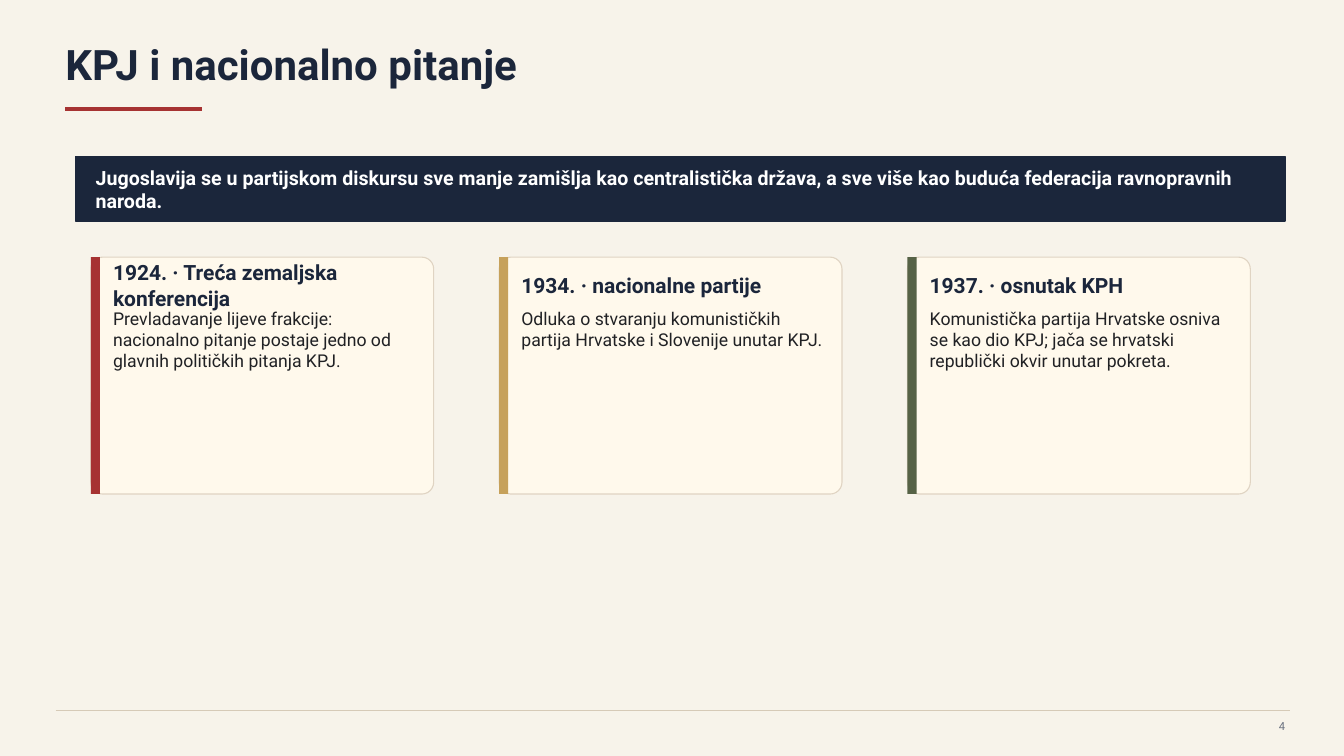
"""Builds the slide on the party and the national question, with three dated cards."""
import lxml.etree
import pptx
import pptx.dml.color
import pptx.enum.shapes
import pptx.enum.text
import pptx.oxml.ns
import pptx.util

Cm = pptx.util.Cm
Pt = pptx.util.Pt
RGBColor = pptx.dml.color.RGBColor
Shape = pptx.enum.shapes.MSO_SHAPE
Anchor = pptx.enum.text.MSO_ANCHOR
Align = pptx.enum.text.PP_ALIGN

PAPER = RGBColor(0xF7, 0xF3, 0xEA)
NAVY = RGBColor(0x1B, 0x26, 0x3B)
RED = RGBColor(0xA6, 0x32, 0x32)
GOLD = RGBColor(0xC6, 0xA1, 0x5B)
GREEN = RGBColor(0x56, 0x62, 0x46)
CREAM = RGBColor(0xFF, 0xF9, 0xEC)
CARD_EDGE = RGBColor(0xE0, 0xD4, 0xC3)
RULE = RGBColor(0xD6, 0xCA, 0xB7)
INK = RGBColor(0x20, 0x21, 0x24)
GRAY = RGBColor(0x6B, 0x72, 0x80)
WHITE = RGBColor(0xFF, 0xFF, 0xFF)

CARDS = [
    (RED, "1924. · Treća zemaljska konferencija",
     "Prevladavanje lijeve frakcije: nacionalno pitanje postaje jedno od "
     "glavnih političkih pitanja KPJ."),
    (GOLD, "1934. · nacionalne partije",
     "Odluka o stvaranju komunističkih partija Hrvatske i Slovenije unutar KPJ."),
    (GREEN, "1937. · osnutak KPH",
     "Komunistička partija Hrvatske osniva se kao dio KPJ; jača se hrvatski "
     "republički okvir unutar pokreta."),
]


class Deck:
    font = "Roboto"

    def __init__(self, prs):
        self.s = prs.slides.add_slide(prs.slide_layouts[6])
        self.s.background.fill.solid()
        self.s.background.fill.fore_color.rgb = PAPER

    def text(self, x, y, w, h, words, size, color, bold=False,
             anchor=Anchor.MIDDLE, align=Align.LEFT):
        tf = self.s.shapes.add_textbox(Cm(x), Cm(y), Cm(w), Cm(h)).text_frame
        tf.word_wrap = True
        tf.vertical_anchor = anchor
        tf.margin_left = tf.margin_right = tf.margin_top = tf.margin_bottom = 0
        p = tf.paragraphs[0]
        p.alignment = align
        r = p.add_run()
        r.text = words
        r.font.name = self.font
        r.font.size = Pt(size)
        r.font.bold = bold
        r.font.color.rgb = color

    def shape(self, kind, x, y, w, h, fill, edge=None, width=1):
        sp = self.s.shapes.add_shape(kind, Cm(x), Cm(y), Cm(w), Cm(h))
        sp.shadow.inherit = False
        sp.fill.solid()
        sp.fill.fore_color.rgb = fill
        if edge is None:
            sp.line.fill.background()
        else:
            sp.line.color.rgb = edge
            sp.line.width = Pt(width)
        return sp

    def rule(self, x1, x2, y, color, width):
        line = self.s.shapes.add_connector(
            pptx.enum.shapes.MSO_CONNECTOR.STRAIGHT, Cm(x1), Cm(y), Cm(x2), Cm(y))
        line.line.color.rgb = color
        line.line.width = Pt(width)
        lxml.etree.SubElement(line._element.spPr, pptx.oxml.ns.qn("a:effectLst"))

    def card(self, x, y, accent, heading, body):
        w, h = 8.64, 5.97
        sp = self.shape(Shape.ROUNDED_RECTANGLE, x, y, w, h, CREAM, CARD_EDGE, 0.8)
        sp.adjustments[0] = 0.05
        self.shape(Shape.RECTANGLE, x, y, 0.23, h, accent)
        self.text(x + 0.56, y + 0.35, 7.75, 0.71, heading, 15, NAVY, bold=True)
        self.text(x + 0.56, y + 1.27, 7.75, 4.39, body, 12.6, INK, anchor=Anchor.TOP)


def main():
    prs = pptx.Presentation()
    prs.slide_width, prs.slide_height = Cm(33.87), Cm(19.05)
    deck = Deck(prs)
    deck.text(1.65, 0.97, 21.34, 1.27, "KPJ i nacionalno pitanje", 30, NAVY, bold=True)
    deck.rule(1.65, 5.08, 2.74, RED, 3)
    deck.shape(Shape.RECTANGLE, 1.91, 3.94, 30.48, 1.63, NAVY, NAVY)
    deck.text(2.41, 4.39, 29.21, 0.76,
              "Jugoslavija se u partijskom diskursu sve manje zamišlja kao "
              "centralistička država, a sve više kao buduća federacija "
              "ravnopravnih naroda.", 14, WHITE, bold=True)
    for i, (accent, heading, body) in enumerate(CARDS):
        deck.card(2.29 + i * 10.29, 6.48, accent, heading, body)
    deck.rule(1.4, 32.51, 17.91, RULE, 0.7)
    deck.text(31.12, 18.03, 1.27, 0.51, "4", 8, GRAY, align=Align.RIGHT)
    prs.save("out.pptx")


if __name__ == "__main__":
    main()
